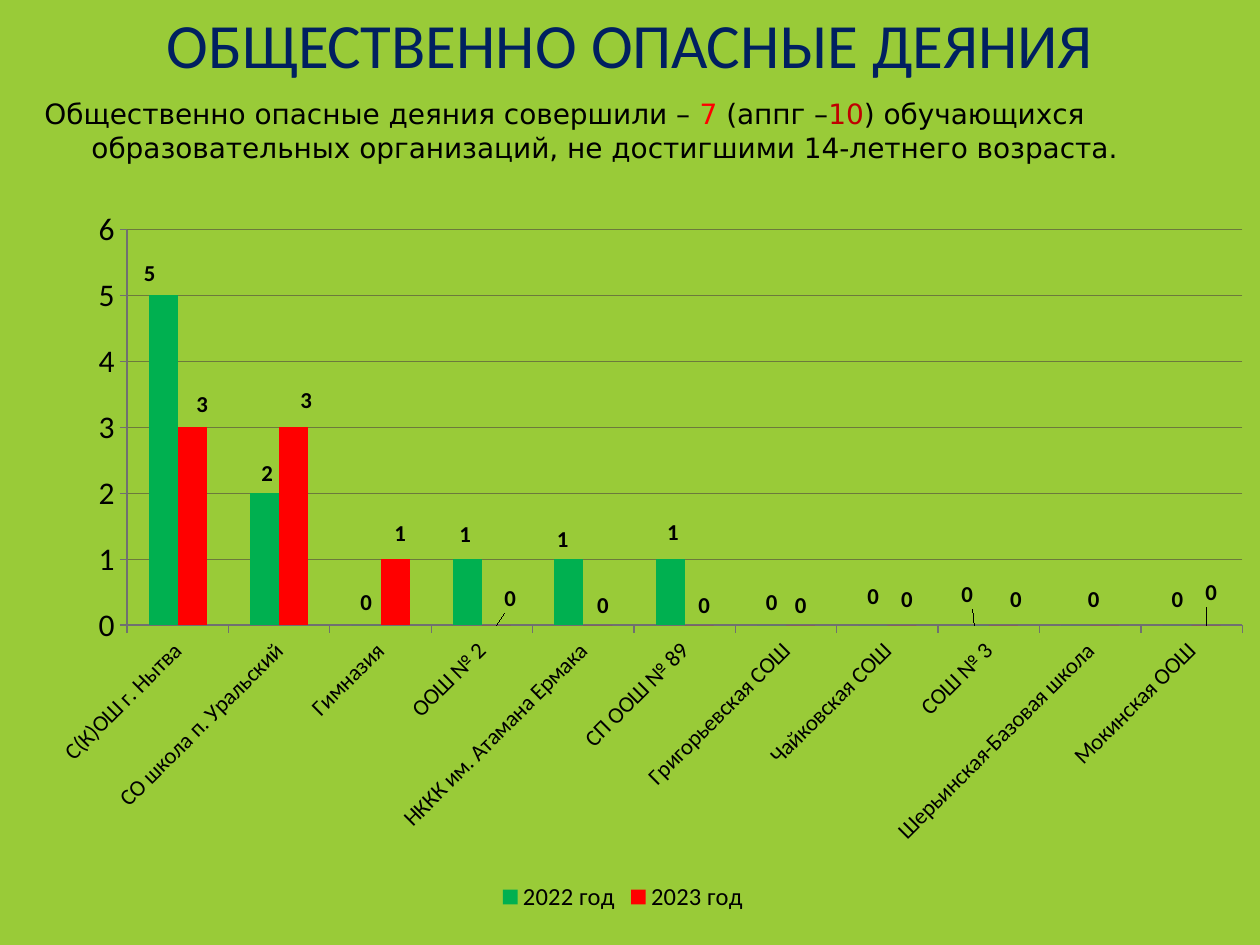
from dataclasses import dataclass

from lxml import etree
from pptx import Presentation
from pptx import util as u
from pptx.chart.data import CategoryChartData
from pptx.dml.color import RGBColor
from pptx.enum import chart as ch, text
from pptx.oxml import parse_xml
from pptx.oxml.ns import nsdecls, qn


@dataclass(frozen=True)
class Theme:
    background: str = "99CB38"
    title: str = "002060"
    ink: str = "000000"
    red: str = "FF0000"
    dark_red: str = "C00000"
    green: str = "00B050"
    grid: str = "6C7A3C"
    axis: str = "707070"
    font: str = "Calibri"
    body_font: str = "DejaVu Sans"
    title_size: int = 36
    body_size: int = 16
    axis_size: int = 18
    legend_size: int = 14
    label_size: int = 13


@dataclass(frozen=True)
class YearSeries:
    """One year; shifts move each label by thousandths of the chart, None hides it."""
    name: str
    color: str
    values: tuple
    shifts: tuple


THEME = Theme()
SCHOOLS = (
    "С(К)ОШ г. Нытва", "СО школа п. Уральский", "Гимназия", "ООШ № 2",
    "НККК им. Атамана Ермака", "СП ООШ № 89", "Григорьевская СОШ",
    "Чайковская СОШ", "СОШ № 3", "Шерьинская-Базовая школа", "Мокинская ООШ",
)
YEARS = (
    YearSeries("2022 год", THEME.green, (5, 2, 0, 1, 1, 1, 0, 0, 0, 0, 0),
               ((-11, -4), (2, 0), (0, -4), (-2, -7), (-5, -1), (2, -10),
                (0, -4), (0, -12), (-6, -15), None, (0, -8))),
    YearSeries("2023 год", THEME.red, (3, 3, 1, 0, 0, 0, 0, 0, 0, 0, 0),
               ((8, -4), (10, -10), (4, -8), (11, -10), (4, 0), (4, 0),
                (0, 0), (4, -8), (10, -8), (-9, -8), (4, -18))),
)
SUMMARY = (
    ("Общественно опасные деяния совершили – ", THEME.ink),
    ("7 ", THEME.red),
    ("(аппг –", THEME.ink),
    ("10", THEME.dark_red),
    (") обучающихся образовательных организаций, "
     "не достигшими 14-летнего возраста.", THEME.ink),
)


def set_font(font, *, size: int, color: str = THEME.ink,
             name: str = THEME.font, bold: bool = False) -> None:
    font.size, font.name, font.bold = u.Pt(size), name, bold
    font.color.rgb = RGBColor.from_string(color)


def add_run(p, words: str, **fmt) -> None:
    r = p.add_run()
    r.text = words
    set_font(r.font, **fmt)


def place(sp, left: float, top: float, width: float, height: float) -> None:
    sp.left, sp.top, sp.width, sp.height = map(u.Cm, (left, top, width, height))


def manual_layout(x: float, y: float, w: float = 0, h: float = 0):
    """Offset for a label, or an inner plot area when a size is given."""
    parts = [("x", x), ("y", y)]
    if w:
        parts = [("layoutTarget", "inner"), ("xMode", "edge"),
                 ("yMode", "edge"), *parts, ("w", w), ("h", h)]
    inner = "".join(f'<c:{tag} val="{val}"/>' for tag, val in parts)
    return parse_xml(f'<c:layout {nsdecls("c")}><c:manualLayout>{inner}'
                     "</c:manualLayout></c:layout>")


def style_line(line, color: str) -> None:
    line.color.rgb = RGBColor.from_string(color)
    line.width = u.Pt(0.75)


def label_points(series, year: YearSeries) -> None:
    labels = series.data_labels
    labels.show_value = True
    labels.position = ch.XL_LABEL_POSITION.OUTSIDE_END
    set_font(labels.font, size=THEME.label_size, bold=True)
    for i, shift in enumerate(year.shifts):
        label = series.points[i].data_label
        set_font(label.font, size=THEME.label_size, bold=True)
        label.position = ch.XL_LABEL_POSITION.OUTSIDE_END
        node = series.data_labels._element.findall(qn("c:dLbl"))[i]
        idx = node.find(qn("c:idx"))
        if shift is None:
            for child in list(node)[1:]:
                node.remove(child)
            etree.SubElement(node, qn("c:delete")).set("val", "1")
        else:
            for old in node.findall(qn("c:layout")):
                node.remove(old)
            idx.addnext(manual_layout(shift[0] / 1000, shift[1] / 1000))


def style_axes(chart) -> None:
    cat, val = chart.category_axis, chart.value_axis
    for axis, size in ((cat, THEME.label_size), (val, THEME.axis_size)):
        axis.major_tick_mark = ch.XL_TICK_MARK.OUTSIDE
        axis.minor_tick_mark = ch.XL_TICK_MARK.NONE
        set_font(axis.tick_labels.font, size=size)
        style_line(axis.format.line, THEME.axis)
    rotated = cat._element.find(qn("c:txPr")).find(qn("a:bodyPr"))
    rotated.set("rot", "-2700000")
    rotated.set("vert", "horz")
    val.minimum_scale, val.maximum_scale, val.major_unit = 0, 6, 1
    val.has_major_gridlines = True
    style_line(val.major_gridlines.format.line, THEME.grid)


def add_offence_chart(s) -> None:
    data = CategoryChartData(number_format="General")
    data.categories = SCHOOLS
    for year in YEARS:
        data.add_series(year.name, year.values)
    box = map(u.Cm, (0, 3.96, 25.12, 14.53))
    chart = s.shapes.add_chart(ch.XL_CHART_TYPE.COLUMN_CLUSTERED, *box, data).chart
    chart.has_title = False
    set_font(chart.font, size=THEME.axis_size)
    chart.has_legend = True
    chart.legend.position = ch.XL_LEGEND_POSITION.BOTTOM
    chart.legend.include_in_layout = False
    set_font(chart.legend.font, size=THEME.legend_size)
    style_axes(chart)

    plot = chart.plots[0]
    plot.gap_width, plot.overlap, plot.vary_by_categories = 150, 0, False
    for series, year in zip(plot.series, YEARS):
        series.format.fill.solid()
        series.format.fill.fore_color.rgb = RGBColor.from_string(year.color)
        label_points(series, year)

    area = chart._chartSpace.find(qn("c:chart")).find(qn("c:plotArea"))
    for old in area.findall(qn("c:layout")):
        area.remove(old)
    area.insert(0, manual_layout(0.102, 0.046, 0.895, 0.549))


def fill_title(sp) -> None:
    place(sp, 0, 0.43, 25.4, 1.07)
    tf = sp.text_frame
    tf.auto_size = text.MSO_AUTO_SIZE.NONE
    tf.vertical_anchor = text.MSO_ANCHOR.MIDDLE
    p = tf.paragraphs[0]
    p.alignment, p.line_spacing = text.PP_ALIGN.CENTER, 0.9
    add_run(p, "ОБЩЕСТВЕННО ОПАСНЫЕ ДЕЯНИЯ", size=THEME.title_size, color=THEME.title)


def fill_summary(sp) -> None:
    place(sp, 0.64, 1.7, 24.13, 2.54)
    tf = sp.text_frame
    tf.auto_size = text.MSO_AUTO_SIZE.NONE
    tf.vertical_anchor = text.MSO_ANCHOR.TOP
    tf.margin_top = u.Cm(0.25)
    p = tf.paragraphs[0]
    p.space_before = u.Pt(0)
    pPr = p._p.get_or_add_pPr()
    pPr.set("marL", str(u.Cm(0.95)))
    pPr.set("indent", str(-u.Cm(0.95)))
    etree.SubElement(pPr, qn("a:buNone"))
    for words, color in SUMMARY:
        add_run(p, words, size=THEME.body_size, color=color, name=THEME.body_font)


def main() -> None:
    prs = Presentation()
    prs.slide_width, prs.slide_height = u.Cm(25.4), u.Cm(19.05)
    s = prs.slides.add_slide(prs.slide_layouts[1])
    s.background.fill.solid()
    s.background.fill.fore_color.rgb = RGBColor.from_string(THEME.background)
    fill_title(s.shapes.title)
    add_offence_chart(s)
    fill_summary(s.placeholders[1])
    prs.save("out.pptx")


if __name__ == "__main__":
    main()
